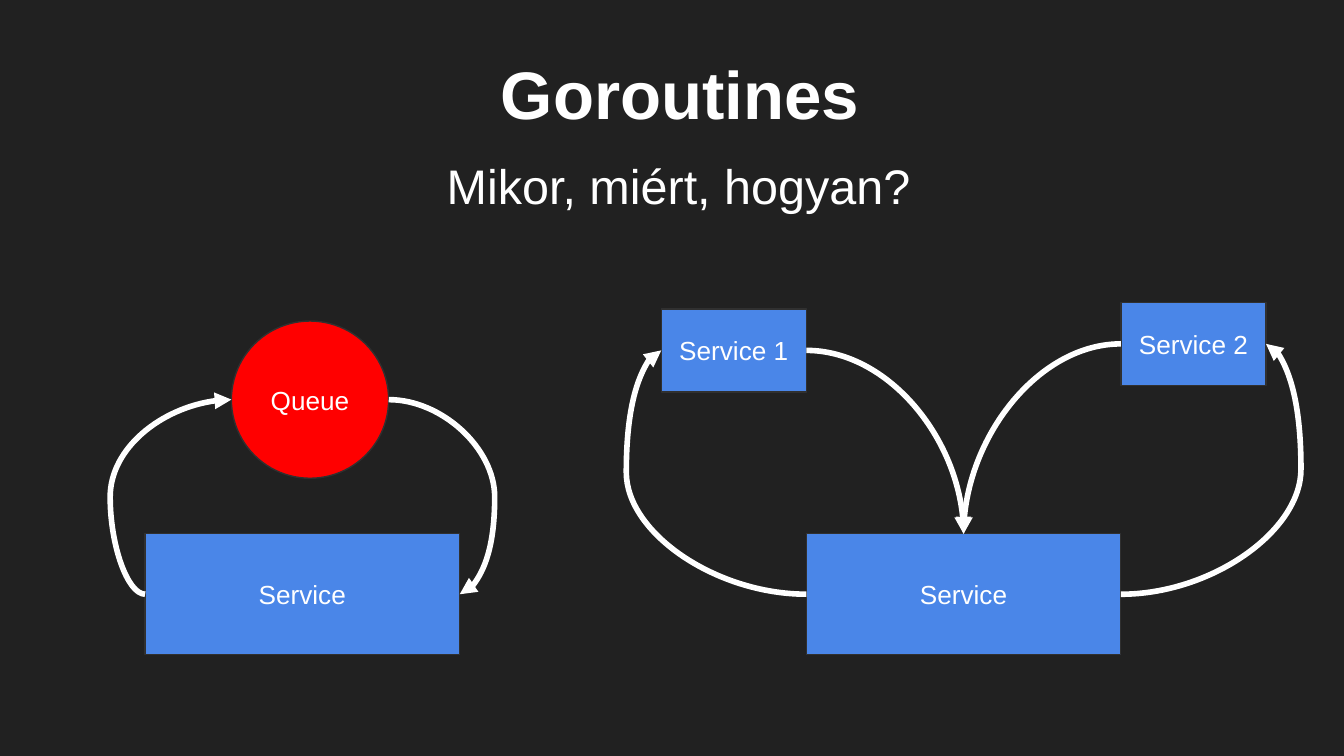
from lxml.etree import SubElement
from pptx import Presentation
from pptx.dml.color import RGBColor
from pptx.enum.shapes import MSO_CONNECTOR as Connector, MSO_SHAPE as Preset
from pptx.enum.text import MSO_ANCHOR as Anchor, PP_ALIGN as Align
from pptx.oxml.ns import qn
from pptx.util import Pt

COLORS = {
    "background": "212121",
    "text": "FFFFFF",
    "arrow": "FFFFFF",
    "service": "4A86E8",
    "queue": "FF0000",
    "outline": "303030",
}


def color(name):
    return RGBColor.from_string(COLORS[name])


def write_text(shape, text, size=14, bold=False, anchor=Anchor.MIDDLE, spacing=None):
    frame = shape.text_frame
    frame.word_wrap = True
    frame.vertical_anchor = anchor
    for side in ("left", "top", "right", "bottom"):
        setattr(frame, f"margin_{side}", Pt(7.2))
    paragraph = frame.paragraphs[0]
    paragraph.alignment = Align.CENTER
    if spacing:
        paragraph.line_spacing = spacing
    run = paragraph.add_run()
    run.text = text
    run.font.name = "Arial"
    run.font.size = Pt(size)
    run.font.bold = bold
    run.font.color.rgb = color("text")


def left_of(shape):
    return shape.left.pt, shape.top.pt + shape.height.pt / 2


def right_of(shape):
    return shape.left.pt + shape.width.pt, shape.top.pt + shape.height.pt / 2


def top_of(shape):
    return shape.left.pt + shape.width.pt / 2, shape.top.pt


class DiagramSlide:
    outline_width = 0.75
    arrow_width = 3
    loop_reach = 18.75

    def __init__(self, presentation):
        self.slide = presentation.slides.add_slide(presentation.slide_layouts[6])
        fill = self.slide.background.fill
        fill.solid()
        fill.fore_color.rgb = color("background")

    def heading(self, text, box, **text_format):
        shape = self.slide.shapes.add_textbox(*map(Pt, box))
        write_text(shape, text, **text_format)

    def node(self, text, box, fill="service", preset=Preset.RECTANGLE):
        shape = self.slide.shapes.add_shape(preset, *map(Pt, box))
        shape.shadow.inherit = False
        shape.fill.solid()
        shape.fill.fore_color.rgb = color(fill)
        shape.line.color.rgb = color("outline")
        shape.line.width = Pt(self.outline_width)
        write_text(shape, text)
        return shape

    def arrow(self, start, end, arrowhead="tailEnd"):
        connector = self.slide.shapes.add_connector(
            Connector.CURVE, *map(Pt, (*start, *end))
        )
        connector.line.color.rgb = color("arrow")
        connector.line.width = Pt(self.arrow_width)
        SubElement(connector.line._get_or_add_ln(), qn("a:" + arrowhead), type="triangle")
        properties = connector._element.spPr
        SubElement(properties, qn("a:effectLst"))
        return properties.find(qn("a:prstGeom"))

    def quarter_arrow(self, start, end):
        self.arrow(start, end).set("prst", "curvedConnector2")

    def loop_arrow(self, start, end, side, arrowhead="tailEnd"):
        geometry = self.arrow(start, end, arrowhead)
        outermost = min if side < 0 else max
        turn = outermost(start[0], end[0]) + side * self.loop_reach
        ratio = (turn - start[0]) / (end[0] - start[0])
        guides = geometry.find(qn("a:avLst"))
        if guides is None:
            guides = SubElement(geometry, qn("a:avLst"))
        SubElement(guides, qn("a:gd"), name="adj1", fmla=f"val {round(ratio * 100000)}")


def main():
    presentation = Presentation()
    presentation.slide_width = Pt(720)
    presentation.slide_height = Pt(405)
    diagram = DiagramSlide(presentation)

    diagram.heading("Goroutines", (28.8, 8, 671, 66), size=36, bold=True, spacing=1.41)
    diagram.heading("Mikor, miért, hogyan?", (87, 76.5, 553.5, 56), size=26, anchor=Anchor.TOP)

    queue_service = diagram.node("Service", (77.75, 286, 168.5, 64.75))
    queue = diagram.node("Queue", (124, 172, 84.25, 84.25), "queue", Preset.OVAL)
    diagram.loop_arrow(left_of(queue_service), left_of(queue), -1)
    diagram.loop_arrow(right_of(queue), right_of(queue_service), 1)

    shared_service = diagram.node("Service", (432, 286, 168.5, 64.75))
    first_service = diagram.node("Service 1", (354.25, 165.5, 77.75, 44.5))
    second_service = diagram.node("Service 2", (600.5, 162, 77.75, 44.5))
    for service, outer, inner, side in (
        (first_service, left_of, right_of, -1),
        (second_service, right_of, left_of, 1),
    ):
        diagram.loop_arrow(outer(service), outer(shared_service), side, "headEnd")
        diagram.quarter_arrow(inner(service), top_of(shared_service))

    presentation.save("out.pptx")


if __name__ == "__main__":
    main()
